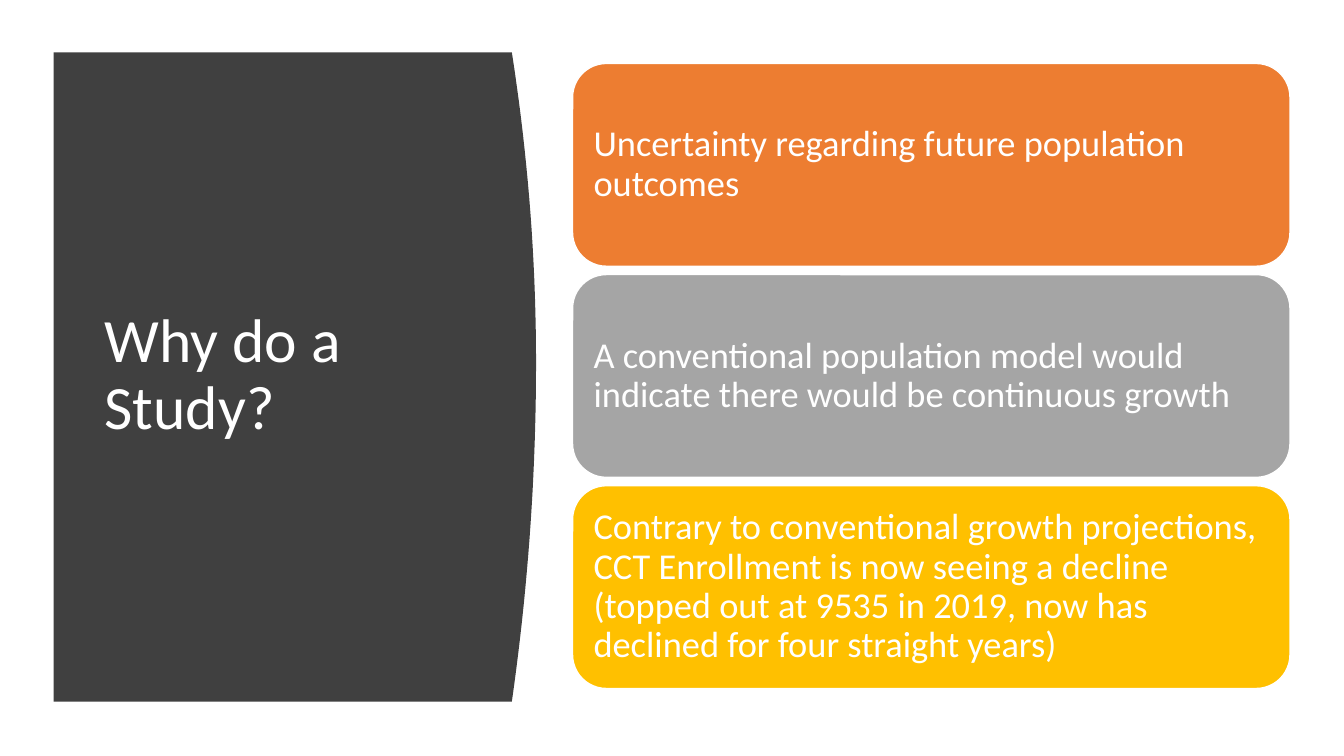
"""Build the "Why do a Study?" slide."""
from pptx import Presentation
from pptx.dml.color import RGBColor
from pptx.enum.shapes import MSO_SHAPE as SHAPE
from pptx.enum.text import MSO_ANCHOR as ANCHOR, PP_ALIGN as ALIGN
from pptx.util import Cm, Pt

COLORS = {"panel": "404040", "orange": "ED7D31", "gray": "A5A5A5",
          "gold": "FFC000", "white": "FFFFFF"}
FONT = "Calibri"
TITLE = "Why do a Study?"
REASONS = [
    ("orange", "Uncertainty regarding future population outcomes"),
    ("gray", "A conventional population model would indicate there would be "
             "continuous growth"),
    ("gold", "Contrary to conventional growth projections, CCT Enrollment is now "
             "seeing a decline (topped out at 9535 in 2019, now has declined for "
             "four straight years)"),
]
PANEL = {"left": 1.35, "top": 1.32, "bottom": 17.68, "edge": 12.9,
         "bulge": 0.61, "peak": 9.14, "steps": 40}
TITLE_BOX = (2.39, 2.82, 9.5, 13.31)
CARD = {"left": 14.43, "top": 1.6, "width": 18.08, "height": 5.11, "gap": 0.21}
CARD_INSET = 0.28


def color(name):
    return RGBColor.from_string(COLORS[name])


def panel_points():
    top, bottom, peak = PANEL["top"], PANEL["bottom"], PANEL["peak"]
    points = [(PANEL["left"], top)]
    for i in range(PANEL["steps"] + 1):
        y = top + (bottom - top) * i / PANEL["steps"]
        reach = peak - top if y < peak else bottom - peak
        x = PANEL["edge"] + PANEL["bulge"] * (1 - ((y - peak) / reach) ** 2)
        points.append((x, y))
    points.append((PANEL["left"], bottom))
    return [(Cm(x), Cm(y)) for x, y in points]


def write(tf, text, size):
    tf.word_wrap = True
    tf.vertical_anchor = ANCHOR.MIDDLE
    p = tf.paragraphs[0]
    p.alignment = ALIGN.LEFT
    p.line_spacing = 0.9
    r = p.add_run()
    r.text = text
    r.font.name = FONT
    r.font.size = Pt(size)
    r.font.color.rgb = color("white")


def paint(sp, name):
    sp.shadow.inherit = False
    sp.fill.solid()
    sp.fill.fore_color.rgb = color(name)


def add_panel(s):
    start, *rest = panel_points()
    builder = s.shapes.build_freeform(*start, scale=1.0)
    builder.add_line_segments(rest, close=True)
    sp = builder.convert_to_shape()
    paint(sp, "panel")
    sp.line.fill.background()


def add_card(s, index, name, text):
    top = CARD["top"] + index * (CARD["height"] + CARD["gap"])
    sp = s.shapes.add_shape(SHAPE.ROUNDED_RECTANGLE, Cm(CARD["left"]), Cm(top),
                            Cm(CARD["width"]), Cm(CARD["height"]))
    paint(sp, name)
    sp.line.color.rgb = color("white")
    sp.line.width = Pt(1)
    tf = sp.text_frame
    tf.margin_left = tf.margin_right = Cm(CARD_INSET)
    tf.margin_top = tf.margin_bottom = Cm(CARD_INSET)
    write(tf, text, 26)


def main():
    prs = Presentation()
    prs.slide_width, prs.slide_height = Cm(33.87), Cm(19.05)
    s = prs.slides.add_slide(prs.slide_layouts[6])
    add_panel(s)
    title = s.shapes.add_textbox(*(Cm(v) for v in TITLE_BOX))
    write(title.text_frame, TITLE, 44)
    for index, (name, text) in enumerate(REASONS):
        add_card(s, index, name, text)
    prs.save("out.pptx")


if __name__ == "__main__":
    main()
